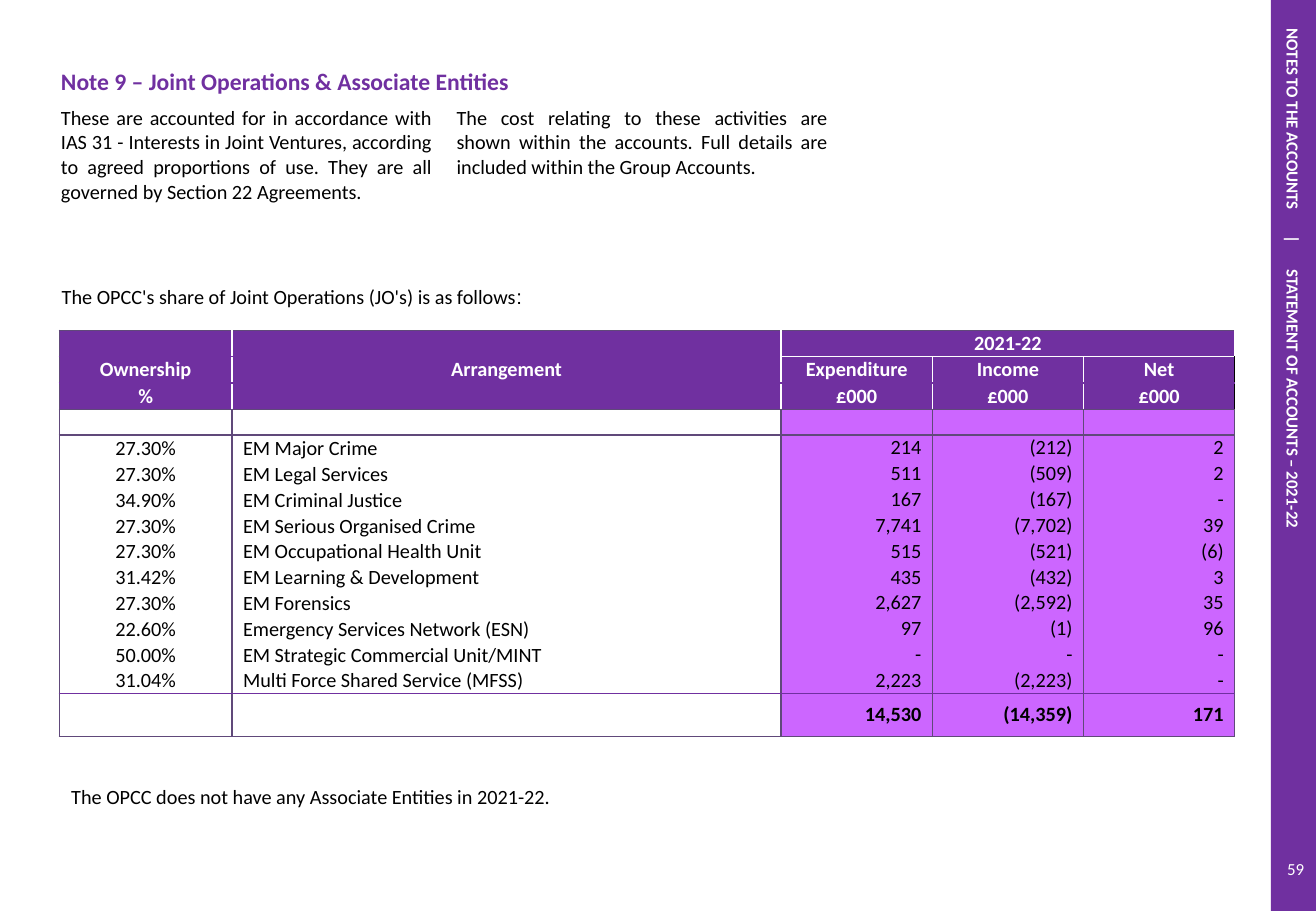
from lxml import etree
from pptx import Presentation
from pptx.dml.color import RGBColor
from pptx.enum import shapes, text
from pptx.oxml import ns
from pptx.util import Cm, Pt

PURPLE, EDGE, LILAC = "7030A0", "60497A", "CC66FF"
WHITE, BLACK = "FFFFFF", "000000"
LEFT, MID, RIGHT, JUST = (text.PP_ALIGN.LEFT, text.PP_ALIGN.CENTER,
                          text.PP_ALIGN.RIGHT, text.PP_ALIGN.JUSTIFY)
NO_STYLE = "{2D5ABB26-0587-4C30-8999-92F81FD0307C}"


def put(par, words, align=LEFT, size=12, hue=BLACK, bold=False, face="Calibri"):
    """Add one formatted run to a paragraph."""
    par.alignment = align
    run = par.add_run()
    run.text = words
    font = run.font
    font.name, font.size, font.bold = face, Pt(size), bold
    font.color.rgb = RGBColor.from_string(hue)


def rule(cell, side, hue):
    """Draw one 1 pt border of a cell; side is L, R, T or B."""
    line = etree.SubElement(cell._tc.get_or_add_tcPr(), ns.qn("a:ln" + side), w="12700")
    fill = etree.SubElement(line, ns.qn("a:solidFill"))
    etree.SubElement(fill, ns.qn("a:srgbClr"), val=hue)


deck = Presentation()
deck.slide_width, deck.slide_height = Cm(27.51), Cm(19.05)
slide = deck.slides.add_slide(deck.slide_layouts[6])

# Side bar
bar = slide.shapes.add_shape(shapes.MSO_SHAPE.RECTANGLE, Cm(26.57), 0, Cm(0.94), Cm(19.1))
bar.shadow.inherit = False
bar.fill.solid()
bar.fill.fore_color.rgb = RGBColor.from_string(PURPLE)
bar.line.fill.background()
frame = bar.text_frame
frame.margin_top = Cm(0.6)
frame.vertical_anchor = text.MSO_ANCHOR.MIDDLE
frame._txBody.bodyPr.set("vert", "vert")
par = frame.paragraphs[0]
put(par, "NOTES TO THE ACCOUNTS\t|\tSTATEMENT OF ACCOUNTS – 2021-22", LEFT, 10, WHITE, True)
tabs = etree.SubElement(par._p.get_or_add_pPr(), ns.qn("a:tabLst"))
for stop in (4.33, 5.04):
    etree.SubElement(tabs, ns.qn("a:tab"), pos=str(Cm(stop)), algn="l")

# Page number
box = slide.shapes.add_textbox(Cm(26.65), Cm(17.65), Cm(0.86), Cm(1.02))
frame = box.text_frame
frame.word_wrap = True
frame.margin_left = 0
frame.vertical_anchor = text.MSO_ANCHOR.MIDDLE
put(frame.paragraphs[0], "59", RIGHT, 10, WHITE)

# Heading and introduction
intro = slide.shapes.add_table(2, 3, Cm(1.02), Cm(1.32), Cm(24.81), Cm(3.73)).table
intro._tbl.tblPr.find(ns.qn("a:tableStyleId")).text = NO_STYLE
intro.rows[0].height, intro.rows[1].height = Cm(0.79), Cm(2.94)
intro.cell(0, 0).merge(intro.cell(0, 2))
for cell in intro.iter_cells():
    cell.fill.background()
    cell.margin_top = cell.margin_bottom = Cm(0.1)
    cell.text_frame.paragraphs[0].space_after = Pt(6)
put(intro.cell(0, 0).text_frame.paragraphs[0],
    "Note 9 – Joint Operations & Associate Entities", JUST, 14, PURPLE, True)
blurbs = [
    "These are accounted for in accordance with IAS 31 - Interests in Joint Ventures, "
    "according to agreed proportions of use. They are all governed by Section 22 Agreements.",
    "The cost relating to these activities are shown within the accounts. "
    "Full details are included within the Group Accounts.",
]
for col, blurb in enumerate(blurbs):
    put(intro.cell(1, col).text_frame.paragraphs[0], blurb, JUST)

# Sentences above and below the table
for left, top, runs in [
    (1.04, 5.82, [("The OPCC's share of Joint Operations (JO's) is as follows", "Calibri"),
                  (":", "Arial")]),
    (1.24, 16.28, [("The OPCC does not have any Associate Entities in 2021-22.", "Calibri")]),
]:
    frame = slide.shapes.add_textbox(Cm(left), Cm(top), Cm(15.93), Cm(0.76)).text_frame
    frame.word_wrap = True
    for words, face in runs:
        put(frame.paragraphs[0], words, face=face)

# Joint operations table
rows = [
    ("", "", "2021-22", "", ""),
    ("Ownership", "Arrangement", "Expenditure", "Income", "Net"),
    ("%", "", "£000", "£000", "£000"),
    ("", "", "", "", ""),
    ("27.30%", "EM Major Crime", "214", "(212)", "2"),
    ("27.30%", "EM Legal Services", "511", "(509)", "2"),
    ("34.90%", "EM Criminal Justice", "167", "(167)", "-"),
    ("27.30%", "EM Serious Organised Crime", "7,741", "(7,702)", "39"),
    ("27.30%", "EM Occupational Health Unit", "515", "(521)", "(6)"),
    ("31.42%", "EM Learning & Development", "435", "(432)", "3"),
    ("27.30%", "EM Forensics", "2,627", "(2,592)", "35"),
    ("22.60%", "Emergency Services Network (ESN)", "97", "(1)", "96"),
    ("50.00%", "EM Strategic Commercial Unit/MINT", "-", "-", "-"),
    ("31.04%", "Multi Force Shared Service (MFSS)", "2,223", "(2,223)", "-"),
    ("", "", "14,530", "(14,359)", "171"),
]
HEAD, LAST = 3, len(rows) - 1
grid = slide.shapes.add_table(len(rows), 5, Cm(1.24), Cm(6.91), Cm(24.57), Cm(8.49)).table
grid._tbl.tblPr.find(ns.qn("a:tableStyleId")).text = NO_STYLE
for col, width in enumerate((3.61, 11.48, 3.16, 3.16, 3.16)):
    grid.columns[col].width = Cm(width)
grid.cell(0, 2).merge(grid.cell(0, 4))

for row, line in enumerate(rows):
    head = row < HEAD
    grid.rows[row].height = Cm(0.55 if head else 0.9 if row == LAST else 0.54)
    for col, words in enumerate(line):
        cell = grid.cell(row, col)
        money = col > 1

        inner = WHITE if head else EDGE
        rule(cell, "L", inner if col else EDGE)
        rule(cell, "R", inner if col < 4 else BLACK if head else EDGE)
        if row == 0:
            rule(cell, "T", EDGE)
        elif head:
            rule(cell, "T", WHITE if row == 1 and money else PURPLE)
        elif row in (HEAD, LAST):
            rule(cell, "T", EDGE if row == HEAD else PURPLE)
        if head:
            rule(cell, "B", WHITE if row == 0 and money else EDGE if row == 2 else PURPLE)
        elif row >= LAST - 1:
            rule(cell, "B", EDGE if row == LAST else PURPLE)

        if head or money:
            cell.fill.solid()
            cell.fill.fore_color.rgb = RGBColor.from_string(PURPLE if head else LILAC)
        else:
            cell.fill.background()

        cell.margin_top = cell.margin_bottom = 0
        cell.margin_left = Cm(0.23 if col == 1 and not head else 0)
        cell.margin_right = Cm(0.23 if money and not head else 0)
        cell.vertical_anchor = (text.MSO_ANCHOR.MIDDLE if head or money
                                else text.MSO_ANCHOR.BOTTOM)
        par = cell.text_frame.paragraphs[0]
        if words:
            align = MID if head or col == 0 else RIGHT if money else LEFT
            put(par, words, align, hue=WHITE if head else BLACK, bold=head or row == LAST)
        else:
            etree.SubElement(par._p, ns.qn("a:endParaRPr"), sz="1200")

deck.save("out.pptx")
